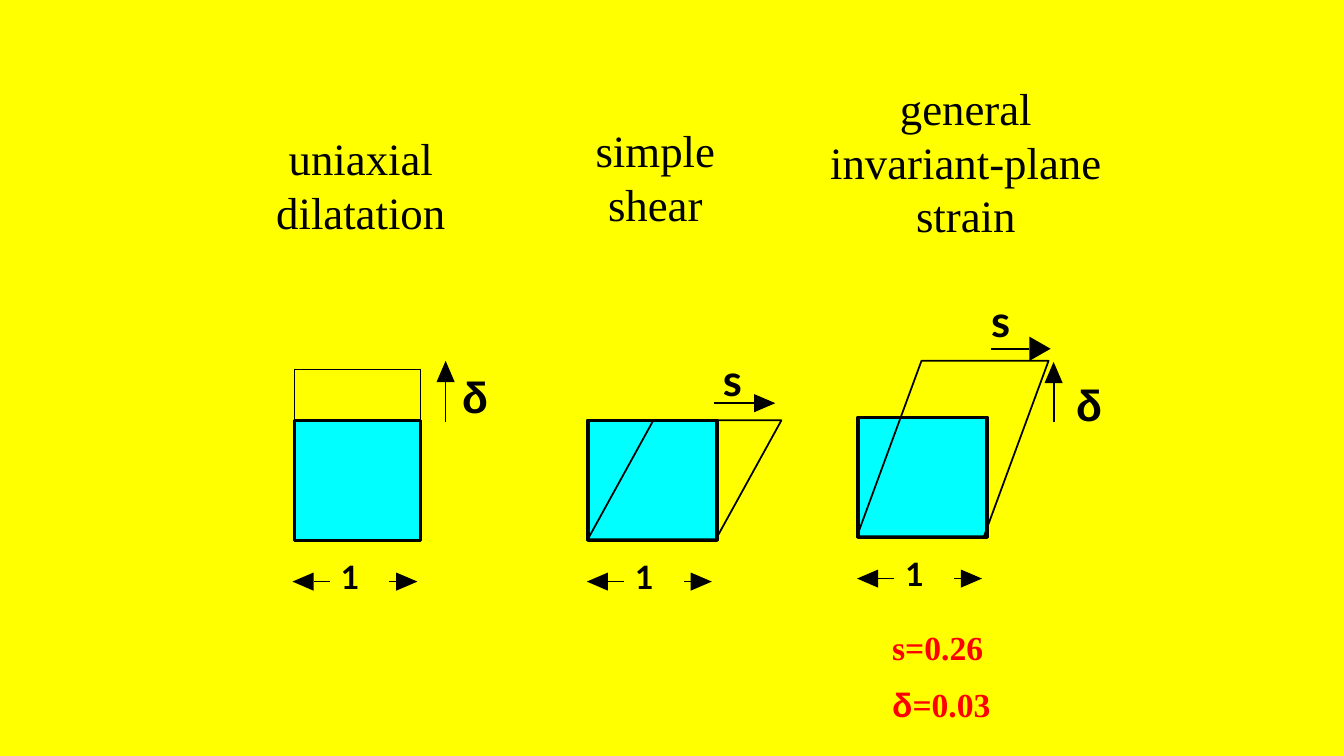
from pptx import Presentation
from pptx import util as u
from pptx.dml.color import RGBColor
from pptx.enum import shapes, text
from pptx.oxml.ns import qn
from lxml import etree

THEME = {
    "back": "FFFF00", "ink": "000000", "square": "00FFFF", "result": "FF0000",
    "serif": "Times New Roman", "greek": "Arial", "sans": "Lato",
    "heading": 32, "symbol": 31, "unit": 23, "value": 24,
    "thin": 0.75, "line": 1.25, "thick": 2.5,
}
SLIDE = (13.33, 7.5)
SQUARE_TOP, SQUARE_HEIGHT, STRAINED_BASE = -1.6, 1.19, -0.42
HEAD_LENGTH, HEAD_HALF, WIDE_HEAD_HALF = 0.21, 0.09, 0.12
GAUGE_ARROWS = [((0.37, 0), (0, 0), HEAD_HALF), ((0.96, 0), (1.24, 0), HEAD_HALF)]
UNIT_AT, UNIT_SIZE, SYMBOL_SIZE = (0.48, -0.24), (0.21, 0.38), (0.22, 0.52)

PANELS = [
    {"heading": "uniaxial dilatation", "heading_frame": (2.58, 1.25, 2, 1.17),
     "origin": (2.9, 5.77), "square": {"left": 0.02, "width": 1.25},
     "strained": {"left": 0.02, "width": 1.25, "lean": 0, "rise": 1.68}, "outline": "thin",
     "arrows": [((1.52, -1.58), (1.52, -2.19), HEAD_HALF)],
     "symbols": [("δ", "greek", (1.68, -2.1))]},
    {"heading": "simple shear", "heading_frame": (5.5, 1.17, 2, 1.17),
     "origin": (5.82, 5.77), "square": {"left": 0.01, "width": 1.28},
     "strained": {"left": 0.01, "width": 1.27, "lean": 0.65, "rise": 1.18}, "outline": "line",
     "arrows": [((1.26, -1.77), (1.87, -1.77), HEAD_HALF)],
     "symbols": [("s", "sans", (1.35, -2.27))]},
    {"heading": "general invariant-plane strain", "heading_frame": (8.08, 0.75, 3, 1.72),
     "origin": (8.5, 5.74), "square": {"left": 0.01, "width": 1.28},
     "strained": {"left": 0, "width": 1.26, "lean": 0.64, "rise": 1.74}, "outline": "line",
     "arrows": [((1.33, -2.28), (1.92, -2.28), WIDE_HEAD_HALF),
                ((1.95, -1.55), (1.95, -2.15), HEAD_HALF)],
     "symbols": [("s", "sans", (1.33, -2.82)), ("δ", "greek", (2.17, -1.99))]},
]
RESULTS = [[("s=0.26", "serif")], [("δ", "greek"), ("=0.03", "serif")]]
RESULTS_FRAME = (8.75, 6.17, 1.42, 1.11)


def colour(name):
    return RGBColor.from_string(THEME[name])


def inches(values):
    return [u.Inches(value) for value in values]


def shift(point, step, times=1):
    return point[0] + step[0] * times, point[1] + step[1] * times


def apply(target, values):
    for name, value in values.items():
        setattr(target, name, value)


def draw_line(line, weight):
    line.color.rgb = colour("ink")
    line.width = u.Pt(THEME[weight])


def paint(shape, fill=None, line=None):
    shape.shadow.inherit = False
    if fill:
        shape.fill.solid()
        shape.fill.fore_color.rgb = colour(fill)
    else:
        shape.fill.background()
    if line:
        draw_line(shape.line, line)
    else:
        shape.line.fill.background()


def add_polygon(page, points, **style):
    first, *others = [inches(point) for point in points]
    builder = page.shapes.build_freeform(*first)
    builder.add_line_segments(others, close=True)
    paint(builder.convert_to_shape(), **style)


def add_arrow(page, start, tip, head_half):
    across, down = tip[0] - start[0], tip[1] - start[1]
    length = (across ** 2 + down ** 2) ** 0.5
    along = across / length, down / length
    sideways = -along[1], along[0]
    neck = shift(tip, along, -HEAD_LENGTH)
    shaft = page.shapes.add_connector(shapes.MSO_CONNECTOR.STRAIGHT, *inches(start + neck))
    draw_line(shaft.line, "line")
    etree.SubElement(shaft._element.spPr, qn("a:effectLst"))
    corners = [shift(neck, sideways, head_half), tip, shift(neck, sideways, -head_half)]
    add_polygon(page, corners, fill="ink")


def add_text(page, paragraphs, frame, size, ink="ink", bold=False,
             align=text.PP_ALIGN.LEFT, **frame_format):
    box = page.shapes.add_textbox(*inches(frame))
    apply(box.text_frame, {
        "word_wrap": True, "auto_size": text.MSO_AUTO_SIZE.SHAPE_TO_FIT_TEXT, **frame_format})
    for index, spans in enumerate(paragraphs):
        para = box.text_frame.add_paragraph() if index else box.text_frame.paragraphs[0]
        para.alignment = align
        para.space_before = u.Pt(THEME[size] / 2 if index else 0)
        for words, face in spans:
            span = para.add_run()
            span.text = words
            span.font.color.rgb = colour(ink)
            apply(span.font, {"name": THEME[face], "size": u.Pt(THEME[size]), "bold": bold})


def add_symbol(page, words, face, place, extent, size):
    no_margins = {f"margin_{side}": 0 for side in ("left", "top", "right", "bottom")}
    add_text(page, [[(words, face)]], place + extent, size,
             bold=True, word_wrap=False, **no_margins)


def strained_corners(left, width, lean, rise):
    top = STRAINED_BASE - rise
    return [(left, STRAINED_BASE), (left + lean, top),
            (left + lean + width, top), (left + width, STRAINED_BASE)]


def add_panel(page, panel):
    origin = panel["origin"]
    square = panel["square"]
    corner = shift(origin, (square["left"], SQUARE_TOP))
    shape = page.shapes.add_shape(
        shapes.MSO_SHAPE.RECTANGLE, *inches((*corner, square["width"], SQUARE_HEIGHT)))
    paint(shape, fill="square", line="thick")

    corners = [shift(origin, point) for point in strained_corners(**panel["strained"])]
    add_polygon(page, corners, line=panel["outline"])

    for start, tip, head_half in GAUGE_ARROWS + panel["arrows"]:
        add_arrow(page, shift(origin, start), shift(origin, tip), head_half)

    add_symbol(page, "1", "sans", shift(origin, UNIT_AT), UNIT_SIZE, "unit")
    for words, face, place in panel["symbols"]:
        add_symbol(page, words, face, shift(origin, place), SYMBOL_SIZE, "symbol")

    add_text(page, [[(panel["heading"], "serif")]], panel["heading_frame"], "heading",
             align=text.PP_ALIGN.CENTER)


def main():
    deck = Presentation()
    deck.slide_width, deck.slide_height = inches(SLIDE)
    page = deck.slides.add_slide(deck.slide_layouts[6])
    page.background.fill.solid()
    page.background.fill.fore_color.rgb = colour("back")
    for panel in PANELS:
        add_panel(page, panel)
    add_text(page, RESULTS, RESULTS_FRAME, "value", ink="result", bold=True)
    deck.save("out.pptx")


if __name__ == "__main__":
    main()
